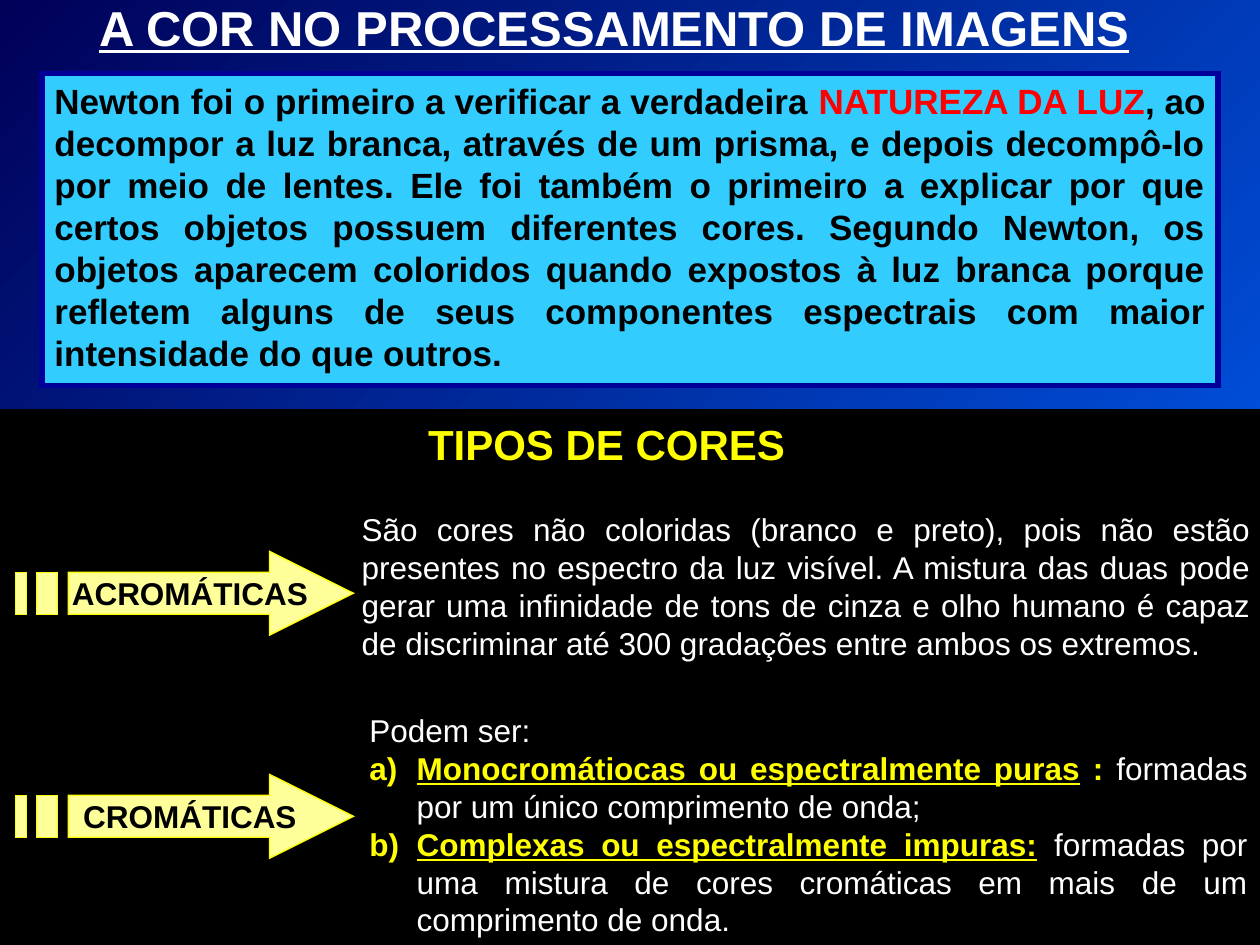
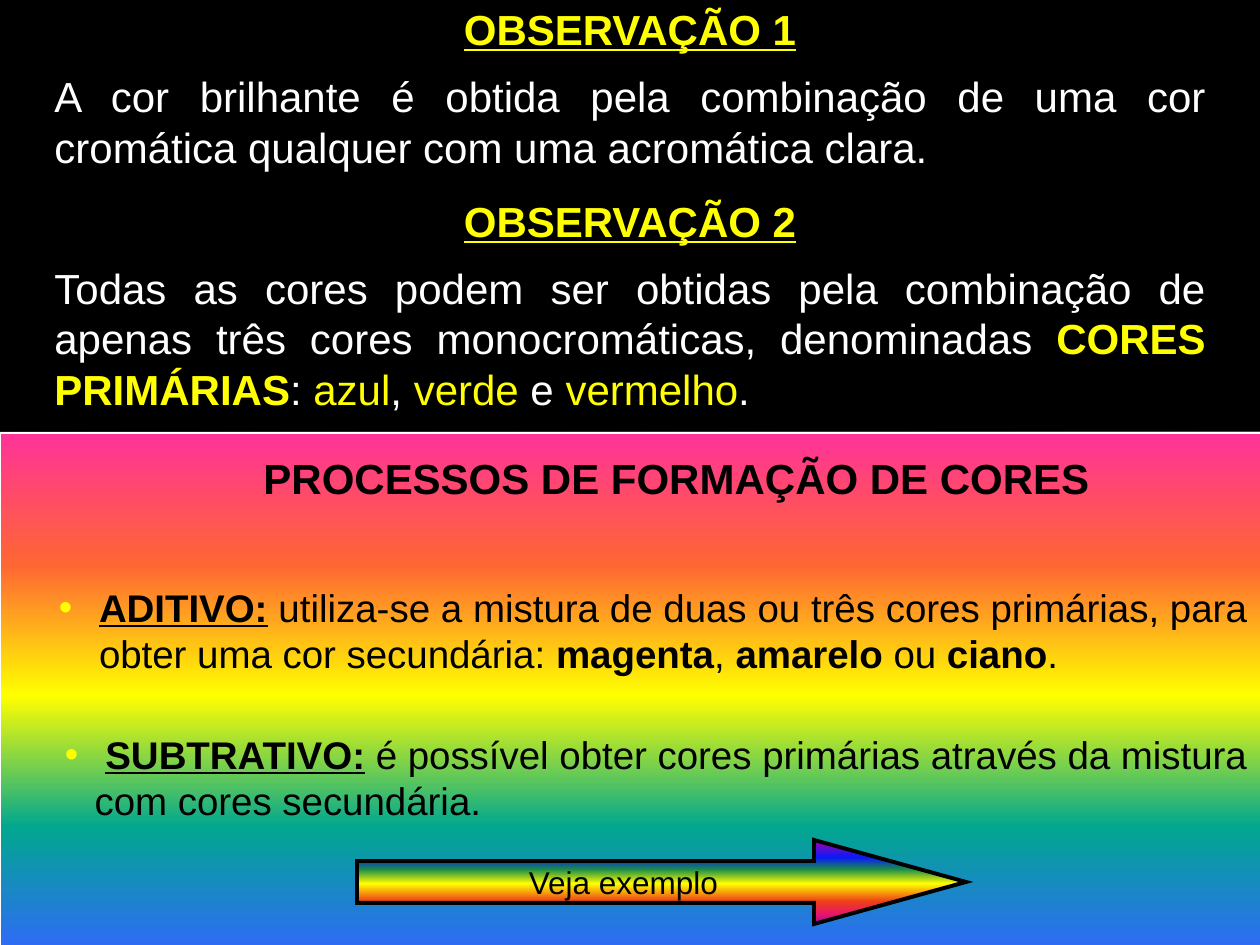
from dataclasses import dataclass

import lxml.etree
import pptx
import pptx.dml.color
import pptx.enum.shapes
import pptx.enum.text
import pptx.oxml.ns
import pptx.util

Pt = pptx.util.Pt
qn = pptx.oxml.ns.qn
ALIGN = pptx.enum.text.PP_ALIGN
ANCHOR = pptx.enum.text.MSO_ANCHOR
FIT = pptx.enum.text.MSO_AUTO_SIZE
PRESET = pptx.enum.shapes.MSO_SHAPE

COLORS = {
    "black": "000000", "white": "FFFFFF", "yellow": "FFFF00", "red": "FF0000",
    "cyan": "33CCFF", "frame": "010199", "cream": "FFFF99",
}
BACKDROP = [(0, "000058"), (100, "0066FF")]
RAINBOW = [(0, "FF3399"), (25, "FF6633"), (50, "FFFF00"), (75, "01A78F"), (100, "3366FF")]
SPECTRUM = [(0, "A603AB"), (21, "0819FB"), (35, "1A8D48"), (52, "FFFF00"),
            (73, "EE3F17"), (88, "E81766"), (100, "A603AB")]
PLAIN = {"bold": False, "underline": False}
BOLD = {"bold": True, "underline": False}
HEADING = {"bold": True, "underline": True}


@dataclass
class Span:
    text: str
    color: str = "white"
    look: dict = None


@dataclass
class Para:
    spans: list
    align: int = ALIGN.JUSTIFY
    before: float = 0
    hang: float = 0
    bullet: tuple = ()


@dataclass
class Block:
    box: tuple
    size: float
    paras: list
    wrap: bool = True


@dataclass
class Panel:
    box: tuple
    fill: object
    line: str
    weight: float = 0.75
    preset: int = PRESET.RECTANGLE


def rgb(color: str):
    return pptx.dml.color.RGBColor.from_string(COLORS[color])


def set_gradient(fill, owner, stops: list, angle: float) -> None:
    fill.gradient()
    fill.gradient_angle = 360 - angle
    stop_list = next(owner.iter(qn("a:gsLst")))
    for stop in list(stop_list):
        stop_list.remove(stop)
    for percent, value in stops:
        stop = lxml.etree.SubElement(stop_list, qn("a:gs"), pos=str(percent * 1000))
        lxml.etree.SubElement(stop, qn("a:srgbClr"), val=value)


def paint(shape, fill, line: str, weight: float) -> None:
    shape.shadow.inherit = False
    if isinstance(fill, str):
        shape.fill.solid()
        shape.fill.fore_color.rgb = rgb(fill)
    else:
        set_gradient(shape.fill, shape._element, fill, 90)
    shape.line.color.rgb = rgb(line)
    shape.line.width = Pt(weight)
    outline = next(shape._element.iter(qn("a:ln")))
    lxml.etree.SubElement(outline, qn("a:miter"), lim="800000")


def write(frame, paras: list, size: float, **frame_format) -> None:
    for name, value in frame_format.items():
        setattr(frame, name, value)
    for number, para in enumerate(paras):
        paragraph = frame.add_paragraph() if number else frame.paragraphs[0]
        layout = {"alignment": para.align, "space_before": Pt(para.before)}
        for name, value in layout.items():
            setattr(paragraph, name, value)
        properties = paragraph._p.get_or_add_pPr()
        properties.set("marL", str(Pt(para.hang)))
        properties.set("indent", str(-Pt(para.hang)))
        if para.bullet:
            color = lxml.etree.SubElement(properties, qn("a:buClr"))
            lxml.etree.SubElement(color, qn("a:srgbClr"), val=COLORS["yellow"])
            tag, attribute, mark = para.bullet
            if tag == "a:buChar":
                lxml.etree.SubElement(properties, qn("a:buFont"), typeface="Arial")
            lxml.etree.SubElement(properties, qn(tag), {attribute: mark})
        for span in para.spans:
            run = paragraph.add_run()
            run.text = span.text
            formats = {"name": "Arial", "size": Pt(size), **(span.look or PLAIN)}
            for name, value in formats.items():
                setattr(run.font, name, value)
            run.font.color.rgb = rgb(span.color)


def add_block(slide, block: Block) -> None:
    frame = slide.shapes.add_textbox(*map(Pt, block.box)).text_frame
    write(frame, block.paras, block.size, word_wrap=block.wrap,
          auto_size=FIT.SHAPE_TO_FIT_TEXT)


def add_panel(slide, panel: Panel):
    shape = slide.shapes.add_shape(panel.preset, *map(Pt, panel.box))
    paint(shape, panel.fill, panel.line, panel.weight)
    return shape


def add_striped_arrow(slide, top: float, label: str) -> None:
    head = [(154, 0), (154, 12), (39, 12), (39, 36), (154, 36), (154, 48), (202, 24)]
    stripes = [[(left, 12), (left, 36), (right, 36), (right, 12)]
               for left, right in ((21, 33), (9, 15))]
    contours = [[(Pt(x), Pt(top + y)) for x, y in contour] for contour in (head, *stripes)]
    builder = slide.shapes.build_freeform(*contours[0][0])
    builder.add_line_segments(contours[0][1:])
    for contour in contours[1:]:
        builder.move_to(*contour[0])
        builder.add_line_segments(contour[1:])
    arrow = builder.convert_to_shape()
    paint(arrow, "cream", "yellow", 0.75)
    write(arrow.text_frame, [Para([Span(label, "black", BOLD)], ALIGN.CENTER)], 18,
          word_wrap=False, vertical_anchor=ANCHOR.MIDDLE,
          margin_left=Pt(6), margin_right=Pt(0))


def add_slide(deck):
    slide = deck.slides.add_slide(deck.slide_layouts[6])
    set_gradient(slide.background.fill, slide._element, BACKDROP, 45)
    return slide


def title(text: str, box: tuple, size: float, color: str, look: dict = BOLD,
          align: int = ALIGN.LEFT) -> Block:
    return Block(box, size, [Para([Span(text, color, look)], align)], wrap=False)


def observation(number: int, top: float, height: float, spans: list) -> Block:
    heading = Para([Span(f"OBSERVAÇÃO {number}", "yellow", HEADING)], ALIGN.CENTER)
    return Block((24, top, 672, height), 24, [heading, Para(spans, before=9.6)])


def build_color_types(deck) -> None:
    slide = add_slide(deck)
    add_block(slide, title("A COR NO PROCESSAMENTO DE IMAGENS", (48, -5, 606, 41), 28,
                           "white", HEADING, ALIGN.CENTER))
    newton = add_panel(slide, Panel((24, 42, 672, 178.5), "cyan", "frame", 3))
    write(newton.text_frame, [Para([
        Span("Newton foi o primeiro a verificar a verdadeira ", "black", BOLD),
        Span("NATUREZA DA LUZ", "red", BOLD),
        Span(", ao decompor a luz branca, através de um prisma, e depois decompô-lo por meio "
             "de lentes. Ele foi também o primeiro a explicar por que certos objetos possuem "
             "diferentes cores. Segundo Newton, os objetos aparecem coloridos quando expostos "
             "à luz branca porque refletem alguns de seus componentes espectrais com maior "
             "intensidade do que outros.", "black", BOLD),
    ])], 20, word_wrap=True, vertical_anchor=ANCHOR.TOP)
    add_panel(slide, Panel((0, 234, 720, 306), "black", "black"))
    add_block(slide, title("TIPOS DE CORES", (237.5, 235.5, 220, 36), 24, "yellow"))
    for top, label in ((315, "ACROMÁTICAS"), (442.5, "CROMÁTICAS")):
        add_striped_arrow(slide, top, label)
    add_block(slide, Block((199.5, 288, 522, 93.5), 18, [Para([Span(
        "São cores não coloridas (branco e preto), pois não estão presentes no espectro da luz "
        "visível. A mistura das duas pode gerar uma infinidade de tons de cinza e olho humano "
        "é capaz de discriminar até 300 gradações entre ambos os extremos.")])]))
    letter = ("a:buAutoNum", "type", "alphaLcParenR")
    add_block(slide, Block((204, 403, 516, 137), 18, [
        Para([Span("Podem ser:")], hang=27),
        Para([Span("Monocromátiocas ou espectralmente puras", "yellow", HEADING),
              Span(" :", "yellow", BOLD),
              Span(" formadas por um único comprimento de onda;")], hang=27, bullet=letter),
        Para([Span("Complexas ou espectralmente impuras:", "yellow", HEADING),
              Span(" formadas por uma mistura de cores cromáticas em mais de um comprimento "
                   "de onda.")], hang=27, bullet=letter),
    ]))


def build_color_formation(deck) -> None:
    slide = add_slide(deck)
    add_panel(slide, Panel((0, 0, 720, 246), "black", "black"))
    add_block(slide, observation(1, -1.5, 103, [
        Span("A cor brilhante é obtida pela combinação de uma cor cromática qualquer com uma "
             "acromática clara.")]))
    add_block(slide, observation(2, 108, 132, [
        Span("Todas as cores podem ser obtidas pela combinação de apenas três cores "
             "monocromáticas, denominadas "),
        Span("CORES PRIMÁRIAS", "yellow", BOLD), Span(": "),
        Span("azul", "yellow"), Span(", "), Span("verde", "yellow"), Span(" e "),
        Span("vermelho", "yellow"), Span("."),
    ]))
    add_panel(slide, Panel((0, 247.5, 738, 300), RAINBOW, "white"))
    add_block(slide, title("PROCESSOS DE FORMAÇÃO DE CORES", (143.5, 255, 487, 36), 24, "black"))
    dot = ("a:buChar", "char", "•")
    add_block(slide, Block((30, 414, 690, 60), 22, [Para([
        Span(" ", "yellow", BOLD),
        Span("SUBTRATIVO:", "black", HEADING),
        Span(" é possível obter cores primárias através da mistura com cores secundária.",
             "black"),
    ], hang=17, bullet=dot)]))
    example = add_panel(slide, Panel((204, 480, 348, 48), SPECTRUM, "black", 2.25,
                                     PRESET.RIGHT_ARROW))
    example.adjustments[0] = 0.5
    example.adjustments[1] = 1.81
    write(example.text_frame, [Para([Span("Veja exemplo", "black")], ALIGN.CENTER)], 18,
          word_wrap=False, vertical_anchor=ANCHOR.MIDDLE)
    add_block(slide, Block((26.5, 330, 693.5, 60), 22, [Para([
        Span("ADITIVO:", "black", HEADING),
        Span(" utiliza-se a mistura de duas ou três cores primárias, para obter uma cor "
             "secundária: ", "black"),
        Span("magenta", "black", BOLD), Span(", ", "black"),
        Span("amarelo", "black", BOLD), Span(" ou ", "black"),
        Span("ciano", "black", BOLD), Span(".", "black"),
    ], hang=23, bullet=dot)]))


def main() -> None:
    deck = pptx.Presentation()
    deck.slide_width, deck.slide_height = Pt(720), Pt(540)
    build_color_types(deck)
    build_color_formation(deck)
    deck.save("out.pptx")


if __name__ == "__main__":
    main()
